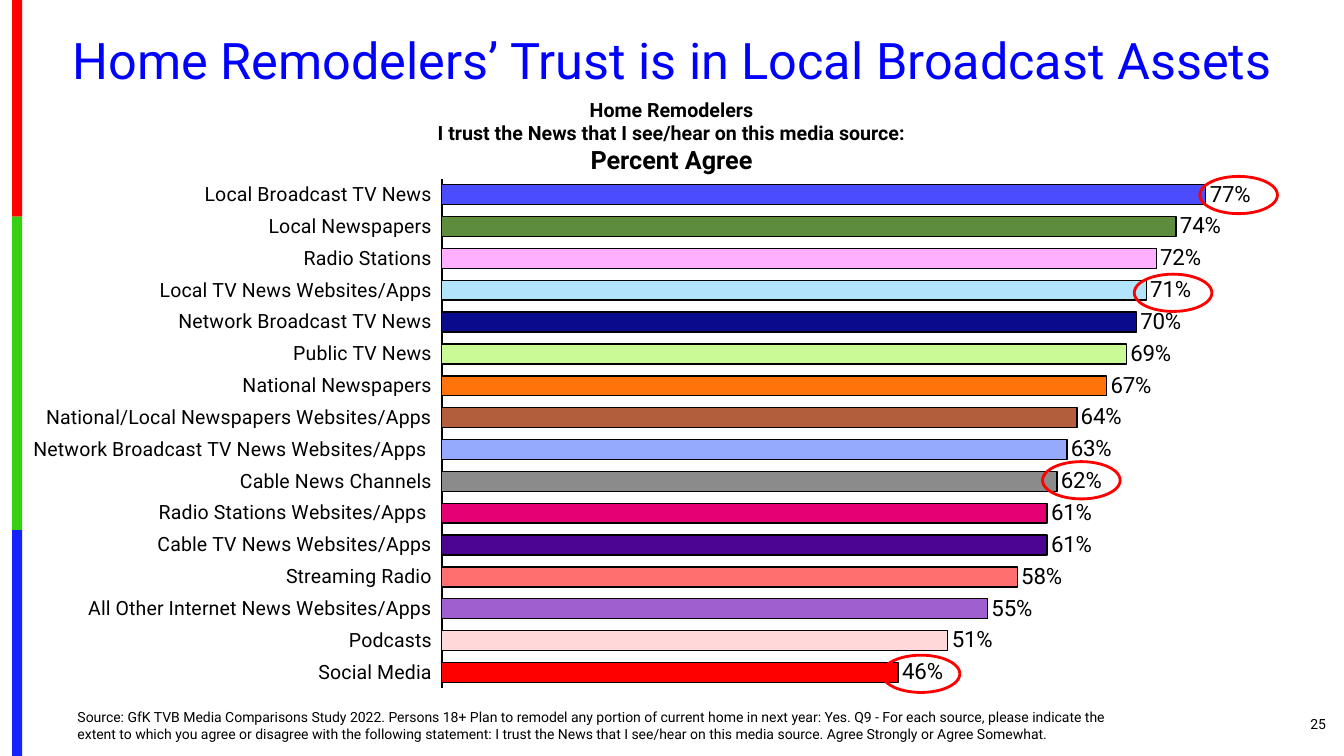
from pptx import Presentation
from pptx.chart.data import CategoryChartData
from pptx.dml.color import RGBColor
from pptx.enum.chart import XL_CHART_TYPE, XL_LABEL_POSITION, XL_TICK_LABEL_POSITION, XL_TICK_MARK
from pptx.enum.shapes import MSO_SHAPE
from pptx.enum.text import MSO_ANCHOR, PP_ALIGN
from pptx.oxml import parse_xml
from pptx.oxml.ns import nsdecls
from pptx.util import Inches, Pt

BAR_CHART = XL_CHART_TYPE.BAR_CLUSTERED
OUTSIDE_END = XL_LABEL_POSITION.OUTSIDE_END
LABELS_LOW = XL_TICK_LABEL_POSITION.LOW
NO_TICKS = XL_TICK_MARK.NONE
RECTANGLE, OVAL = MSO_SHAPE.RECTANGLE, MSO_SHAPE.OVAL
TOP, MIDDLE = MSO_ANCHOR.TOP, MSO_ANCHOR.MIDDLE
LEFT, CENTER, RIGHT = PP_ALIGN.LEFT, PP_ALIGN.CENTER, PP_ALIGN.RIGHT

FONT = "Roboto"
BLACK = RGBColor(0x00, 0x00, 0x00)
TITLE_BLUE = RGBColor(0x00, 0x00, 0xFF)
RING_RED = RGBColor(0xFF, 0x00, 0x00)
STRIPE_RED = RGBColor(0xFE, 0x00, 0x00)
STRIPE_GREEN = RGBColor(0x36, 0xCF, 0x12)
STRIPE_BLUE = RGBColor(0x13, 0x22, 0xFE)

# Media source, share that agrees, bar colour
TRUST = [
    ("Local Broadcast TV News", 0.77, RGBColor(0x4C, 0x4C, 0xFF)),
    ("Local Newspapers", 0.74, RGBColor(0x5C, 0x8C, 0x3C)),
    ("Radio Stations", 0.72, RGBColor(0xFF, 0xAF, 0xFF)),
    ("Local TV News Websites/Apps", 0.71, RGBColor(0xB2, 0xE5, 0xFC)),
    ("Network Broadcast TV News", 0.70, RGBColor(0x0A, 0x0A, 0x8D)),
    ("Public TV News", 0.69, RGBColor(0xCA, 0xFA, 0x96)),
    ("National Newspapers", 0.67, RGBColor(0xFF, 0x73, 0x0A)),
    ("National/Local Newspapers Websites/Apps", 0.64, RGBColor(0xB2, 0x5E, 0x3C)),
    ("Network Broadcast TV News Websites/Apps ", 0.63, RGBColor(0x95, 0xA9, 0xFD)),
    ("Cable News Channels", 0.62, RGBColor(0x8B, 0x8B, 0x8B)),
    ("Radio Stations Websites/Apps ", 0.61, RGBColor(0xE5, 0x00, 0x73)),
    ("Cable TV News Websites/Apps", 0.61, RGBColor(0x4B, 0x05, 0x90)),
    ("Streaming Radio", 0.58, RGBColor(0xFF, 0x6F, 0x6F)),
    ("All Other Internet News Websites/Apps", 0.55, RGBColor(0x9F, 0x5F, 0xCF)),
    ("Podcasts", 0.51, RGBColor(0xFF, 0xD9, 0xD9)),
    ("Social Media", 0.46, RGBColor(0xFF, 0x00, 0x00)),
]
SOURCE = (
    "Source: GfK TVB Media Comparisons Study 2022. Persons 18+ Plan to remodel any portion of "
    "current home in next year: Yes. Q9 - For each source, please indicate the extent to which "
    "you agree or disagree with the following statement: I trust the News that I see/hear on "
    "this media source. Agree Strongly or Agree Somewhat."
)


def set_font(font, size, color=BLACK, bold=False):
    font.name = FONT
    font.size = Pt(size)
    font.bold = bold
    font.color.rgb = color


def add_text(slide, box, lines, align=LEFT, anchor=TOP, color=BLACK, bold=False, line_spacing=1.0):
    """Place one paragraph for each (text, size) pair of lines."""
    text_frame = slide.shapes.add_textbox(*map(Inches, box)).text_frame
    text_frame.word_wrap = True
    text_frame.vertical_anchor = anchor
    text_frame.text = "\n".join(text for text, size in lines)
    for paragraph, (text, size) in zip(text_frame.paragraphs, lines):
        paragraph.alignment = align
        paragraph.line_spacing = line_spacing
        set_font(paragraph.runs[0].font, size, color, bold)


def add_stripe(slide, box):
    """Stack the coloured bands down the left edge."""
    left, top, width, height = box
    green_top, blue_top = top + 2.15, top + 5.26
    bands = [
        (top, green_top, STRIPE_RED),
        (green_top, blue_top, STRIPE_GREEN),
        (blue_top, top + height, STRIPE_BLUE),
    ]
    for start, end, color in bands:
        band = slide.shapes.add_shape(
            RECTANGLE, Inches(left), Inches(start), Inches(width), Inches(end - start))
        band.shadow.inherit = False
        band.fill.solid()
        band.fill.fore_color.rgb = color
        band.line.fill.background()


def set_plot_area(chart, x, y, width, height):
    """Fix the inner plot area as fractions of the chart."""
    plot_area = chart.plots[0]._element.getparent()
    for layout in plot_area.findall("{*}layout"):
        plot_area.remove(layout)
    sizes = "".join(
        f'<c:{name} val="{value}"/>'
        for name, value in (("x", x), ("y", y), ("w", width), ("h", height)))
    plot_area.insert(0, parse_xml(
        f'<c:layout {nsdecls("c")}><c:manualLayout><c:layoutTarget val="inner"/>'
        f'<c:xMode val="edge"/><c:yMode val="edge"/>{sizes}</c:manualLayout></c:layout>'))


def add_trust_chart(slide, box):
    chart_data = CategoryChartData(number_format="0%")
    chart_data.categories = [name for name, share, color in TRUST]
    chart_data.add_series("Series 1", [share for name, share, color in TRUST])
    chart = slide.shapes.add_chart(BAR_CHART, *map(Inches, box), chart_data).chart
    chart.has_legend = False
    chart.has_title = False
    set_font(chart.font, 10)
    set_plot_area(chart, 0.31, 0.02, 0.69, 0.98)

    # Axes
    category_axis = chart.category_axis
    category_axis.reverse_order = True
    category_axis.major_tick_mark = NO_TICKS
    category_axis.tick_label_position = LABELS_LOW
    category_axis.format.line.color.rgb = BLACK
    category_axis.format.line.width = Pt(1.5)
    set_font(category_axis.tick_labels.font, 14)
    value_axis = chart.value_axis
    value_axis.minimum_scale = 0
    value_axis.maximum_scale = 0.9
    value_axis.has_major_gridlines = False
    value_axis.visible = False

    # Bars and their labels
    plot = chart.plots[0]
    plot.gap_width = 60
    plot.vary_by_categories = False
    series = plot.series[0]
    for index, (name, share, color) in enumerate(TRUST):
        bar = series.points[index].format
        bar.fill.solid()
        bar.fill.fore_color.rgb = color
        bar.line.color.rgb = BLACK
        bar.line.width = Pt(1)
    labels = series.data_labels
    labels.show_value = True
    labels.number_format = "0%"
    labels.number_format_is_linked = False
    labels.position = OUTSIDE_END
    set_font(labels.font, 16)


def add_ring(slide, left, top):
    """Circle one value of the chart."""
    ring = slide.shapes.add_shape(OVAL, Inches(left), Inches(top), Inches(0.77), Inches(0.37))
    ring.shadow.inherit = False
    ring.fill.background()
    ring.line.color.rgb = RING_RED
    ring.line.width = Pt(2)


def build_trust_slide(presentation):
    slide = presentation.slides.add_slide(presentation.slide_layouts[6])
    add_stripe(slide, (0.12, 0, 0.1, 7.5))

    # Title, page number and source
    add_text(slide, (0.46, 0.31, 12.42, 0.65),
             [("Home Remodelers’ Trust is in Local Broadcast Assets", 36)],
             align=CENTER, color=TITLE_BLUE, line_spacing=0.9)
    add_text(slide, (10.25, 6.98, 3, 0.4), [("25", 10)], align=RIGHT, anchor=MIDDLE)
    add_text(slide, (0.67, 6.98, 10.42, 0.44), [(SOURCE, 10)])

    # Chart with its heading
    add_text(slide, (1.87, 0.92, 9.58, 0.88),
             [("Home Remodelers", 14),
              ("I trust the News that I see/hear on this media source:", 14),
              ("Percent Agree", 18)],
             align=CENTER, bold=True)
    add_trust_chart(slide, (0.33, 1.67, 12.91, 5.17))
    for left, top in ((11.9, 1.75), (11.25, 2.72), (10.34, 4.58), (8.75, 6.5)):
        add_ring(slide, left, top)


def main():
    presentation = Presentation()
    presentation.slide_width = Inches(13.33)
    presentation.slide_height = Inches(7.5)
    build_trust_slide(presentation)
    presentation.save("out.pptx")


if __name__ == "__main__":
    main()
